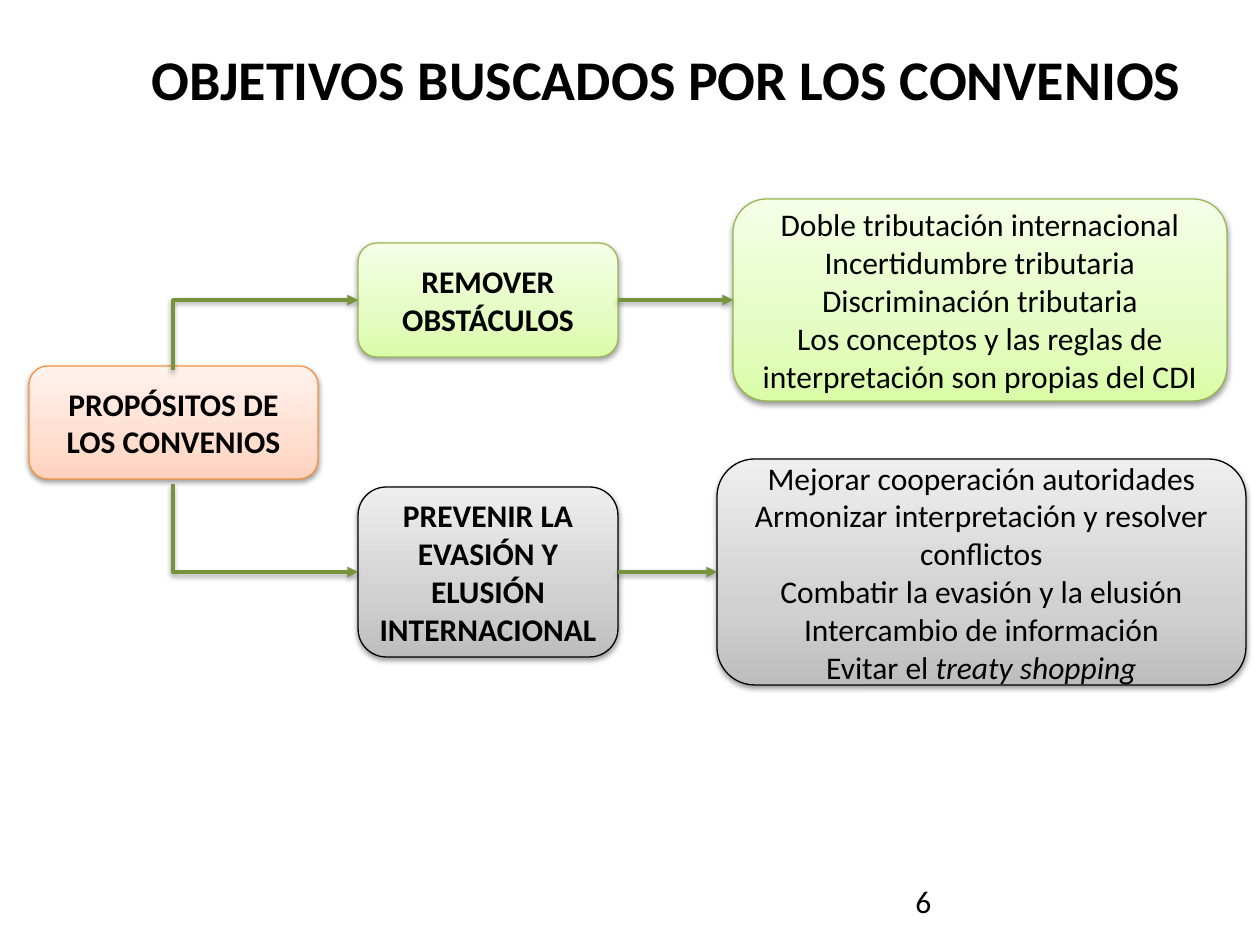
from dataclasses import dataclass
import copy

import lxml.etree
import pptx
import pptx.dml.color
import pptx.enum.shapes
import pptx.enum.text
import pptx.oxml
import pptx.oxml.ns
import pptx.util

EMU_PER_PX = 914400 / 126
NS = pptx.oxml.ns.nsdecls("a")
qn = pptx.oxml.ns.qn
ALIGN = pptx.enum.text.PP_ALIGN
ANCHOR = pptx.enum.text.MSO_ANCHOR
CONNECTOR = pptx.enum.shapes.MSO_CONNECTOR


@dataclass(frozen=True)
class Palette:
    line: str
    stops: tuple[tuple[float, str], ...]


@dataclass(frozen=True)
class Theme:
    font: str = "Calibri"
    text: str = "000000"
    arrow: str = "77933C"
    title_size: int = 32
    body_size: int = 18
    border: float = 0.75
    arrow_width: int = 2
    orange: Palette = Palette("F69240", ((0, "FFD2BD"), (0.35, "FFDED0"), (1, "FFF2ED")))
    green: Palette = Palette("98B955", ((0, "DAFDA7"), (0.35, "E4FCC2"), (1, "F5FFE7")))
    gray: Palette = Palette("000000", ((0, "BDBDBD"), (0.35, "D1D1D1"), (1, "EEEEEE")))


@dataclass(frozen=True)
class Box:
    x: int
    y: int
    w: int
    h: int
    palette: Palette
    lines: tuple[str, ...]
    bold: bool = False
    italic_tail: str = ""


THEME = Theme()

PURPOSES = Box(29, 366, 289, 113, THEME.orange, ("PROPÓSITOS DE LOS CONVENIOS",), bold=True)
OBSTACLES = Box(358, 243, 260, 114, THEME.green, ("REMOVER OBSTÁCULOS",), bold=True)
EVASION = Box(358, 487, 260, 170, THEME.gray,
              ("PREVENIR LA EVASIÓN Y ELUSIÓN INTERNACIONAL",), bold=True)
OBSTACLE_LIST = Box(733, 199, 494, 202, THEME.green, (
    "Doble tributación internacional",
    "Incertidumbre tributaria",
    "Discriminación tributaria",
    "Los conceptos y las reglas de interpretación son propias del CDI",
))
EVASION_LIST = Box(717, 459, 529, 226, THEME.gray, (
    "Mejorar cooperación autoridades",
    "Armonizar interpretación y resolver conflictos",
    "Combatir la evasión y la elusión Intercambio de información",
    "Evitar el ",
), italic_tail="treaty shopping")


def px(value: float) -> int:
    return round(value * EMU_PER_PX)


def rgb(value: str) -> pptx.dml.color.RGBColor:
    return pptx.dml.color.RGBColor.from_string(value)


def format_run(r, size: int, bold: bool = False) -> None:
    r.font.name = THEME.font
    r.font.size = pptx.util.Pt(size)
    r.font.bold = bold
    r.font.color.rgb = rgb(THEME.text)


def add_shadow(s) -> None:
    s._element.spPr.append(pptx.oxml.parse_xml(
        f'<a:effectLst {NS}><a:outerShdw blurRad="40000" dist="20000" dir="5400000" '
        'rotWithShape="0"><a:srgbClr val="000000"><a:alpha val="38000"/></a:srgbClr>'
        '</a:outerShdw></a:effectLst>'))


def fill_gradient(s, palette: Palette) -> None:
    s.fill.gradient()
    s.fill.gradient_angle = 90
    stop_list = s._element.spPr.find(".//" + qn("a:gsLst"))
    stop_list.append(copy.deepcopy(stop_list[0]))
    for stop, (position, color) in zip(s.fill.gradient_stops, palette.stops):
        stop.position = position
        stop.color.rgb = rgb(color)


def add_box(slide, box: Box):
    s = slide.shapes.add_shape(pptx.enum.shapes.MSO_SHAPE.ROUNDED_RECTANGLE,
                               px(box.x), px(box.y), px(box.w), px(box.h))
    fill_gradient(s, box.palette)
    s.line.color.rgb = rgb(box.palette.line)
    s.line.width = pptx.util.Pt(THEME.border)
    add_shadow(s)
    tf = s.text_frame
    tf.word_wrap = True
    tf.vertical_anchor = ANCHOR.MIDDLE
    tf.text = "\n".join(box.lines)
    if box.italic_tail:
        r = tf.paragraphs[-1].add_run()
        r.text = box.italic_tail
        r.font.italic = True
    for p in tf.paragraphs:
        p.alignment = ALIGN.CENTER
        for r in p.runs:
            format_run(r, THEME.body_size, box.bold)
    return s


def style_arrow(s) -> None:
    s.line.color.rgb = rgb(THEME.arrow)
    s.line.width = pptx.util.Pt(THEME.arrow_width)
    lxml.etree.SubElement(s.line._get_or_add_ln(), qn("a:tailEnd"), type="triangle")
    add_shadow(s)


def add_arrow(slide, source, target) -> None:
    s = slide.shapes.add_connector(CONNECTOR.STRAIGHT, 0, 0, 0, 0)
    s.begin_connect(source, 3)
    s.end_connect(target, 1)
    style_arrow(s)


def add_bent_arrow(slide, x1: int, y1: int, x2: int, y2: int) -> None:
    """Go vertically from the start, then right: a one-bend connector turned by 270°."""
    w, h = abs(y2 - y1), x2 - x1
    left, top = (x1 + x2 - w) / 2, (y1 + y2 - h) / 2
    # Going down needs a horizontal flip, so the ends swap sides
    start, end = (left + w, left) if y2 > y1 else (left, left + w)
    s = slide.shapes.add_connector(CONNECTOR.ELBOW, px(start), px(top), px(end), px(top + h))
    sp_pr = s._element.spPr
    sp_pr.find(qn("a:prstGeom")).set("prst", "bentConnector2")
    sp_pr.find(qn("a:xfrm")).set("rot", str(270 * 60000))
    style_arrow(s)


def add_label(slide, x: int, y: int, w: int, h: int, text: str, size: int,
              bold: bool = False, align=ALIGN.LEFT) -> None:
    tf = slide.shapes.add_textbox(px(x), px(y), px(w), px(h)).text_frame
    tf.word_wrap = True
    tf.text = text
    p = tf.paragraphs[0]
    p.alignment = align
    format_run(p.runs[0], size, bold)


def main() -> None:
    prs = pptx.Presentation()
    prs.slide_width, prs.slide_height = px(1260), px(945)
    slide = prs.slides.add_slide(prs.slide_layouts[6])

    # Title and page number
    add_label(slide, 136, 38, 1061, 158, "OBJETIVOS BUSCADOS POR LOS CONVENIOS",
              THEME.title_size, bold=True, align=ALIGN.CENTER)
    add_label(slide, 903, 876, 294, 50, "6", THEME.body_size)

    # Purposes, then one row per objective with its details
    add_box(slide, PURPOSES)
    root_x = PURPOSES.x + PURPOSES.w // 2
    rows = ((OBSTACLES, OBSTACLE_LIST, PURPOSES.y + 4),
            (EVASION, EVASION_LIST, PURPOSES.y + PURPOSES.h + 5))
    for objective, details, start_y in rows:
        source, target = add_box(slide, objective), add_box(slide, details)
        add_bent_arrow(slide, root_x, start_y, objective.x, objective.y + objective.h // 2)
        add_arrow(slide, source, target)

    prs.save("out.pptx")


if __name__ == "__main__":
    main()
